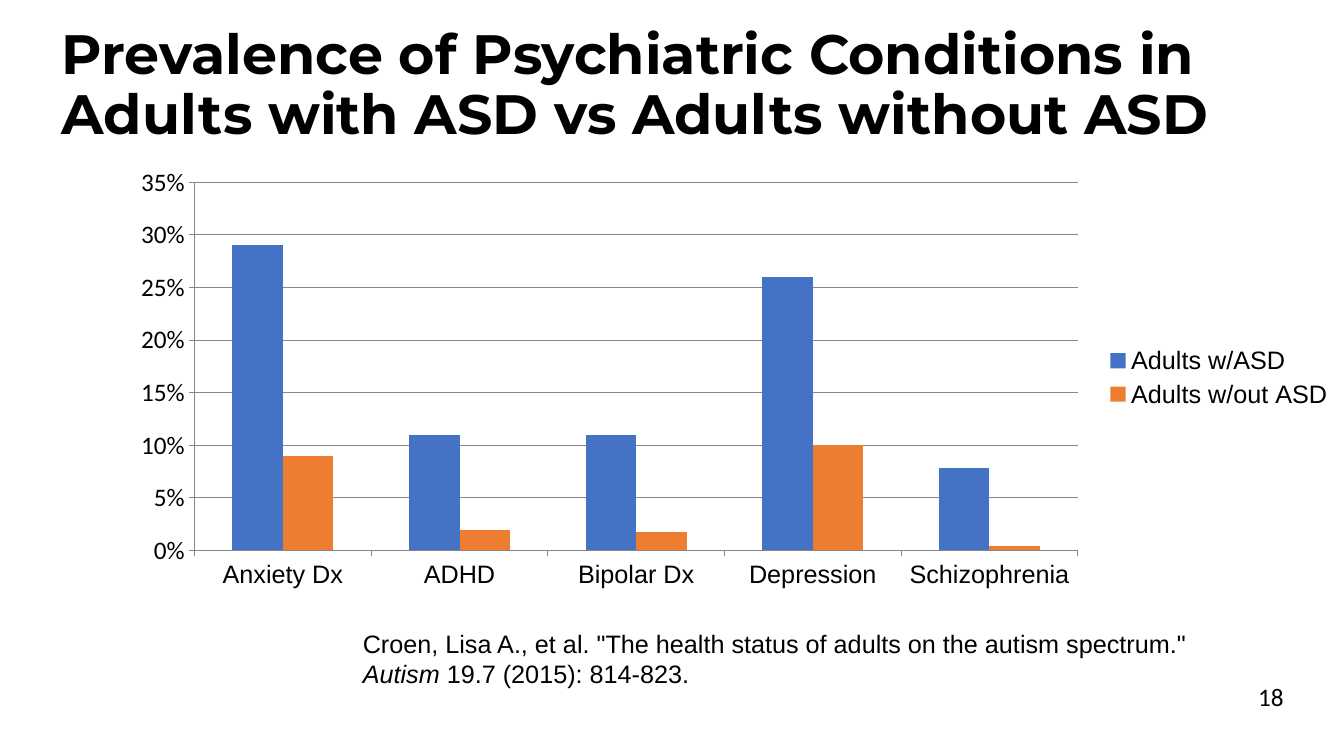
from lxml.etree import SubElement
from pptx import Presentation
from pptx.chart.data import CategoryChartData
from pptx.dml.color import RGBColor
from pptx.enum.chart import XL_CHART_TYPE, XL_LEGEND_POSITION, XL_TICK_MARK
from pptx.enum.text import MSO_ANCHOR, MSO_AUTO_SIZE, PP_ALIGN
from pptx.oxml.ns import qn
from pptx.util import Inches, Pt

COLORS = {"text": "000000", "grid": "878787", "with_asd": "4472C4", "without_asd": "ED7D31"}


class PrevalenceSlide:
    """Holds the text style and the current slide, and adds each kind of element."""

    def __init__(self, deck):
        self.slide = deck.slides.add_slide(deck.slide_layouts[5])
        self.size = 18

    def color(self, key):
        return RGBColor.from_string(COLORS[key])

    def style(self, font, face, size=None):
        font.name = face
        font.size = Pt(size or self.size)
        font.color.rgb = self.color("text")

    def add_run(self, paragraph, text, face, size=None, bold=False, italic=False):
        run = paragraph.add_run()
        run.text = text
        self.style(run.font, face, size)
        run.font.bold = bold
        run.font.italic = italic

    def title(self, text, box):
        heading = self.slide.shapes.title
        heading.left, heading.top, heading.width, heading.height = map(Inches, box)
        frame = heading.text_frame
        frame.auto_size = MSO_AUTO_SIZE.NONE
        frame.word_wrap = True
        frame.vertical_anchor = MSO_ANCHOR.MIDDLE
        paragraph = frame.paragraphs[0]
        paragraph.alignment = PP_ALIGN.LEFT
        paragraph.line_spacing = 0.9
        self.add_run(paragraph, text, "Montserrat", 39.6, bold=True)

    def text(self, lines, box, face, align=PP_ALIGN.LEFT, anchor=MSO_ANCHOR.TOP):
        frame = self.slide.shapes.add_textbox(*map(Inches, box)).text_frame
        frame.word_wrap = True
        frame.vertical_anchor = anchor
        for index, line in enumerate(lines):
            paragraph = frame.add_paragraph() if index else frame.paragraphs[0]
            paragraph.alignment = align
            for words, italic in line:
                self.add_run(paragraph, words, face, italic=italic)

    def chart(self, conditions, groups, box, plot_box):
        data = CategoryChartData(number_format="0%")
        data.categories = conditions
        for name, shares, _ in groups:
            data.add_series(name, shares)
        chart = self.slide.shapes.add_chart(
            XL_CHART_TYPE.COLUMN_CLUSTERED, *map(Inches, box), data).chart
        self.style(chart.font, "Calibri")
        chart.has_title = False
        chart.has_legend = True
        chart.legend.position = XL_LEGEND_POSITION.RIGHT
        chart.legend.include_in_layout = False
        self.style(chart.legend.font, "Arial")

        bars = chart.plots[0]
        bars.gap_width = 150
        bars.overlap = 0
        bars.vary_by_categories = False
        for series, (_, _, color) in zip(bars.series, groups):
            series.format.fill.solid()
            series.format.fill.fore_color.rgb = self.color(color)

        shares_axis = chart.value_axis
        shares_axis.minimum_scale = 0
        shares_axis.maximum_scale = 0.35
        shares_axis.major_unit = 0.05
        shares_axis.has_major_gridlines = True
        shares_axis.tick_labels.number_format = "0%"
        shares_axis.tick_labels.number_format_is_linked = False
        self.style(shares_axis.tick_labels.font, "Calibri")
        self.style(chart.category_axis.tick_labels.font, "Arial")
        for axis in (shares_axis, chart.category_axis):
            axis.major_tick_mark = XL_TICK_MARK.OUTSIDE
            axis.minor_tick_mark = XL_TICK_MARK.NONE
        for part in (shares_axis, chart.category_axis, shares_axis.major_gridlines):
            part.format.line.color.rgb = self.color("grid")
            part.format.line.width = Pt(0.75)
        self.place_plot(chart, box, plot_box)

    def place_plot(self, chart, box, plot_box):
        left, top, width, height = box
        x, y, w, h = plot_box
        shares = ((x - left) / width, (y - top) / height, w / width, h / height)
        area = chart.element.find(".//" + qn("c:plotArea"))
        layout = area.find(qn("c:layout"))
        if layout is None:
            layout = SubElement(area, qn("c:layout"))
            area.insert(0, layout)
        manual = SubElement(layout, qn("c:manualLayout"))
        settings = [("layoutTarget", "inner"), ("xMode", "edge"), ("yMode", "edge"),
                    *zip("xywh", shares)]
        for tag, value in settings:
            SubElement(manual, qn("c:" + tag)).set("val", str(value))


def main():
    deck = Presentation()
    deck.slide_width, deck.slide_height = Inches(13.33), Inches(7.5)
    page = PrevalenceSlide(deck)
    page.title("Prevalence of Psychiatric Conditions in Adults with ASD vs Adults without ASD",
               (0.51, 0.41, 12.17, 0.9))
    page.chart(
        ["Anxiety Dx", "ADHD", "Bipolar Dx", "Depression", "Schizophrenia"],
        [("Adults w/ASD", (0.29, 0.11, 0.11, 0.26, 0.078), "with_asd"),
         ("Adults w/out ASD", (0.09, 0.019, 0.017, 0.1, 0.004), "without_asd")],
        (1.15, 1.57, 12.18, 4.35), (1.93, 1.81, 8.76, 3.65))
    page.text([[('Croen, Lisa A., et al. "The health status of adults on the autism spectrum."', False)],
               [("Autism", True), (" 19.7 (2015): 814-823.", False)]],
              (3.5, 6.18, 9.5, 0.71), "Arial")
    page.text([[("18", False)]], (9.83, 6.71, 3, 0.4), "Calibri",
              PP_ALIGN.RIGHT, MSO_ANCHOR.MIDDLE)
    deck.save("out.pptx")


if __name__ == "__main__":
    main()
